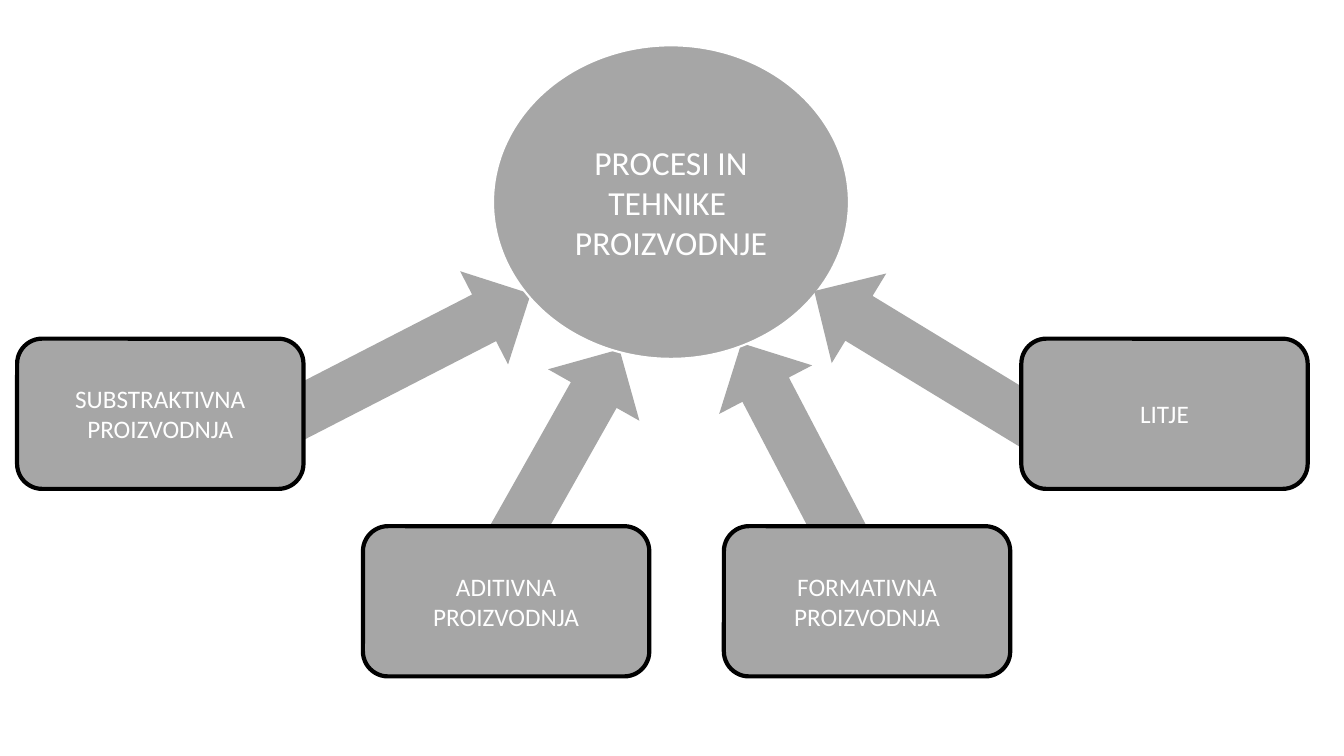
from pptx import Presentation
from pptx.dml.color import RGBColor
from pptx.enum.shapes import MSO_SHAPE
from pptx.enum.text import MSO_ANCHOR, PP_ALIGN
from pptx.util import Inches, Pt

ELLIPSE = MSO_SHAPE.OVAL
ROUND_BOX = MSO_SHAPE.ROUNDED_RECTANGLE
ARROW = MSO_SHAPE.RIGHT_ARROW
MIDDLE, CENTER = MSO_ANCHOR.MIDDLE, PP_ALIGN.CENTER

GRAY = RGBColor(0xA6, 0xA6, 0xA6)
WHITE = RGBColor(0xFF, 0xFF, 0xFF)
BLACK = RGBColor(0x00, 0x00, 0x00)

SLIDE_W, SLIDE_H = 13.33, 7.5
FONT = "Calibri"

TOPIC = ["PROCESI IN TEHNIKE ", "PROIZVODNJE"]
TOPIC_AT = (4.89, 0.45, 3.53, 3.11)

BOX_W, BOX_H = 2.84, 1.49
COLUMNS = [0.17, 3.6, 7.18, 10.13]
UPPER_ROW, LOWER_ROW = 3.36, 5.22
ARROW_H = 1.04

# label lines, row of the box
PROCESSES = [
    (["SUBSTRAKTIVNA", "PROIZVODNJA"], UPPER_ROW),
    (["ADITIVNA", "PROIZVODNJA"], LOWER_ROW),
    (["FORMATIVNA", "PROIZVODNJA"], LOWER_ROW),
    (["LITJE"], UPPER_ROW),
]

# centre x, centre y, length, rotation in degrees
ARROWS_BEHIND = [
    (7.9, 4.45, 2.36, 242.4),
    (5.55, 4.52, 2.42, 299.4),
    (4.01, 3.56, 2.82, 332.8),
]
ARROW_IN_FRONT = (9.28, 3.62, 2.82, 211.3)

prs = Presentation()
prs.slide_width, prs.slide_height = Inches(SLIDE_W), Inches(SLIDE_H)
s = prs.slides.add_slide(prs.slide_layouts[6])


def add_gray_shape(kind, x, y, w, h, line=None, line_pt=0):
    sp = s.shapes.add_shape(kind, Inches(x), Inches(y), Inches(w), Inches(h))
    sp.shadow.inherit = False
    sp.fill.solid()
    sp.fill.fore_color.rgb = GRAY
    if line is None:
        sp.line.fill.background()
    else:
        sp.line.color.rgb = line
        sp.line.width = Pt(line_pt)
    return sp


def write(sp, lines, size, color=WHITE):
    tf = sp.text_frame
    tf.word_wrap = True
    tf.vertical_anchor = MIDDLE
    for i, text in enumerate(lines):
        p = tf.paragraphs[0] if i == 0 else tf.add_paragraph()
        p.alignment = CENTER
        r = p.add_run()
        r.text = text
        r.font.name = FONT
        r.font.size = Pt(size)
        r.font.color.rgb = color


def add_arrow(cx, cy, length, angle):
    sp = add_gray_shape(ARROW, cx - length / 2, cy - ARROW_H / 2, length, ARROW_H)
    sp.rotation = angle


for arrow in ARROWS_BEHIND:
    add_arrow(*arrow)
write(add_gray_shape(ELLIPSE, *TOPIC_AT, line=WHITE, line_pt=1.5), TOPIC, size=24)
add_arrow(*ARROW_IN_FRONT)

for x, (lines, y) in zip(COLUMNS, PROCESSES):
    box = add_gray_shape(ROUND_BOX, x, y, BOX_W, BOX_H, line=BLACK, line_pt=3)
    write(box, lines, size=18)

prs.save("out.pptx")
